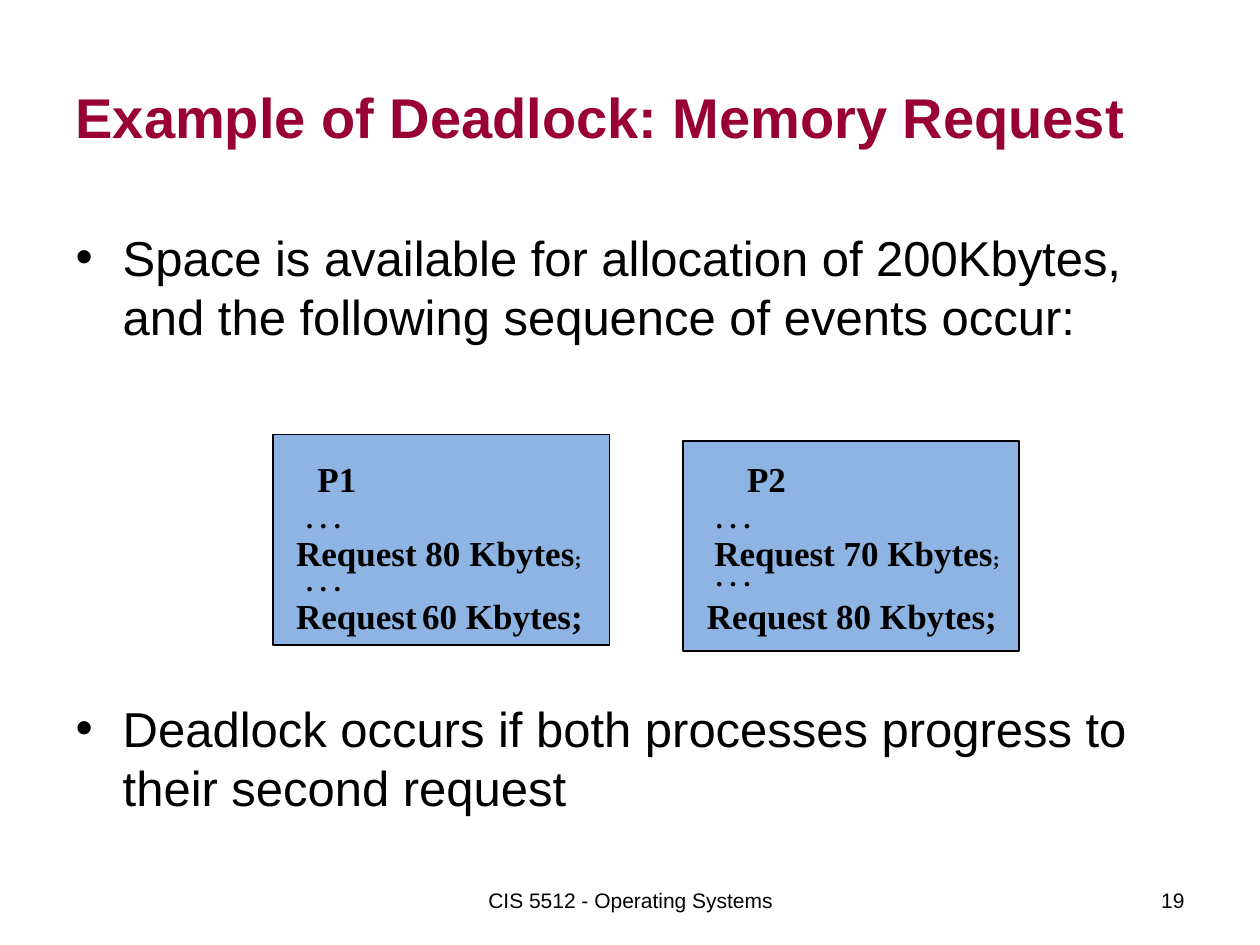
"""Build the slide on deadlock between two memory requests."""
from dataclasses import dataclass

from lxml.etree import SubElement
from pptx import Presentation
from pptx.dml.color import RGBColor as Rgb
from pptx.enum.shapes import MSO_SHAPE as Shape
from pptx.enum.text import MSO_ANCHOR as Anchor, PP_ALIGN as Align
from pptx.oxml.ns import qn
from pptx.util import Cm, Pt


@dataclass(frozen=True)
class Theme:
    sans: str = "Arial"
    serif: str = "Times New Roman"
    red: Rgb = Rgb(0x99, 0x00, 0x33)
    blue: Rgb = Rgb(0x8E, 0xB4, 0xE3)
    black: Rgb = Rgb(0, 0, 0)
    head: int = 32
    body: int = 28
    code: int = 20
    dots: int = 16
    small: int = 12


look = Theme()
TITLE = "Example of Deadlock: Memory Request"
POINTS = [
    ("Space is available for allocation of 200Kbytes, "
     "and the following sequence of events occur:", 0),
    ("Deadlock occurs if both processes progress to their second request", 201.7),
]
FOOT = [
    ("CIS 5512 - Operating Systems", 8.69, 8.05, Align.CENTER),
    ("19", 18.21, 5.92, Align.RIGHT),
]
DOTS = [(". . .", look.dots)]
TASKS = [
    ((5.51, 8.76), [
        (6.15, 9.09, [("P1", look.code)]),
        (5.92, 9.96, DOTS),
        (5.72, 10.59, [("Request 80 Kbytes", look.code), (";", look.small)]),
        (5.92, 11.23, DOTS),
        (5.72, 11.86, [("Request", look.code), (" ", look.small),
                       ("60 Kbytes;", look.code)]),
    ]),
    ((13.77, 8.89), [
        (14.81, 9.09, [("P2", look.code)]),
        (14.18, 9.96, DOTS),
        (14.15, 10.59, [("Request 70 Kbytes", look.code), (";", look.small)]),
        (14.18, 11.13, DOTS),
        (14.0, 11.86, [("Request 80 Kbytes;", look.code)]),
    ]),
]
BOX = (6.78, 4.24)
WIDE, SLIM, TALL = 6.63, 1.5, 1.12


def style(font, name, size, color=look.black, bold=False):
    font.name, font.size, font.bold = name, Pt(size), bold
    font.color.rgb = color


def place(item, *spot):
    item.left, item.top, item.width, item.height = map(Cm, spot)


def add_text(slide, *spot):
    frame = slide.shapes.add_textbox(*map(Cm, spot)).text_frame
    frame.word_wrap = True
    return frame


def add_title(slide):
    title = slide.shapes.title
    place(title, 1.27, 0.76, 22.86, 3.18)
    frame = title.text_frame
    frame.text = TITLE
    frame.vertical_anchor = Anchor.MIDDLE
    para = frame.paragraphs[0]
    para.alignment = Align.LEFT
    style(para.runs[0].font, look.sans, look.head, look.red, True)


def add_points(slide):
    body = slide.placeholders[1]
    place(body, 1.27, 4.45, 22.86, 12.57)
    frame = body.text_frame
    frame.text = "\n".join(text for text, gap in POINTS)
    for para, (text, gap) in zip(frame.paragraphs, POINTS):
        para.line_spacing = Pt(33.75)
        para.space_before = Pt(gap)
        props = para._p.get_or_add_pPr()
        props.set("marL", str(Cm(0.95)))
        props.set("indent", str(-Cm(0.95)))
        SubElement(props, qn("a:buChar")).set("char", "•")
        style(para.runs[0].font, look.sans, look.body)


def add_task(slide, spot, lines):
    box = slide.shapes.add_shape(Shape.RECTANGLE, *map(Cm, spot + BOX))
    box.shadow.inherit = False
    box.fill.solid()
    box.fill.fore_color.rgb = look.blue
    box.line.color.rgb = look.black
    box.line.width = Pt(1)
    for left, top, parts in lines:
        wide = WIDE if len(parts[0][0]) > 5 else SLIM
        para = add_text(slide, left, top, wide, TALL).paragraphs[0]
        for text, size in parts:
            run = para.add_run()
            run.text = text
            style(run.font, look.serif, size, bold=True)


def add_foot(slide):
    for text, left, wide, align in FOOT:
        frame = add_text(slide, left, 17.65, wide, 1.01)
        frame.text = text
        frame.vertical_anchor = Anchor.MIDDLE
        para = frame.paragraphs[0]
        para.alignment = align
        style(para.runs[0].font, look.sans, look.small)


def main():
    deck = Presentation()
    deck.slide_width, deck.slide_height = Cm(25.4), Cm(19.05)
    slide = deck.slides.add_slide(deck.slide_layouts[1])
    add_title(slide)
    add_points(slide)
    add_foot(slide)
    for spot, lines in TASKS:
        add_task(slide, spot, lines)
    deck.save("out.pptx")


if __name__ == "__main__":
    main()
